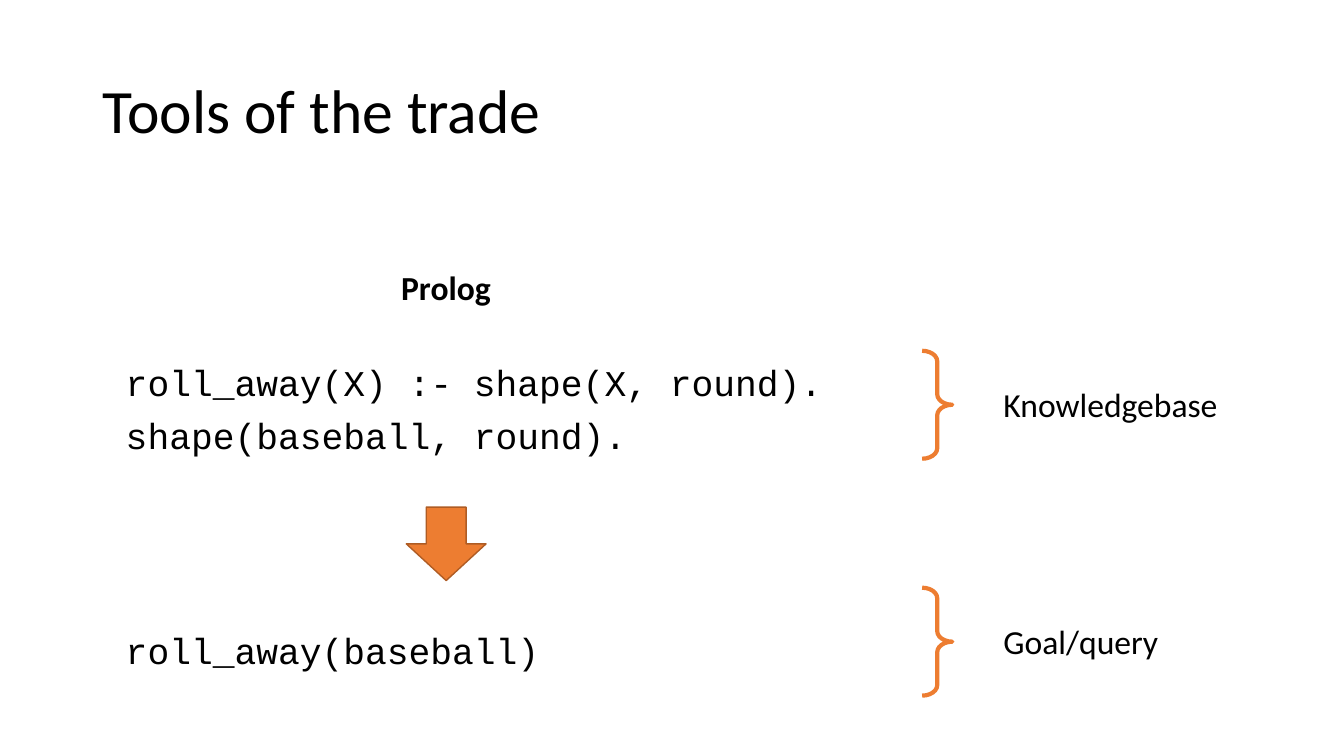
from dataclasses import dataclass

import pptx
import pptx.dml.color
import pptx.enum.shapes
import pptx.enum.text
import pptx.util
from pptx.util import Cm, Pt


@dataclass(frozen=True)
class Theme:
    text: str = "000000"
    accent: str = "ED7D31"
    accent_dark: str = "AF5C24"
    body_font: str = "Calibri"
    code_font: str = "Courier New"
    title_size: float = 44
    label_size: float = 24
    code_size: float = 25.9


theme = Theme()
RGB = pptx.dml.color.RGBColor.from_string
SHAPES = pptx.enum.shapes.MSO_SHAPE
ALIGN = pptx.enum.text.PP_ALIGN
ANCHOR = pptx.enum.text.MSO_ANCHOR


def write_text(shape, text, size, font=theme.body_font, bold=False,
               align=ALIGN.LEFT, anchor=ANCHOR.TOP, line_spacing=1.0):
    """Fill a shape with one paragraph per line, 10 pt apart."""
    frame = shape.text_frame
    frame.word_wrap = True
    frame.vertical_anchor = anchor
    frame.text = text
    for index, paragraph in enumerate(frame.paragraphs):
        paragraph.alignment = align
        paragraph.line_spacing = line_spacing
        paragraph.space_before = Pt(10 if index else 0)
        for run in paragraph.runs:
            run.font.name = font
            run.font.size = Pt(size)
            run.font.bold = bold
            run.font.color.rgb = RGB(theme.text)


presentation = pptx.Presentation()
presentation.slide_width = Cm(33.87)
presentation.slide_height = Cm(19.05)
slide = presentation.slides.add_slide(presentation.slide_layouts[5])
shapes = slide.shapes

title = shapes.title
title.left, title.top, title.width, title.height = Cm(2.34), Cm(1.02), Cm(29.21), Cm(3.68)
write_text(title, "Tools of the trade", theme.title_size,
           anchor=ANCHOR.MIDDLE, line_spacing=0.9)

heading = shapes.add_textbox(Cm(6.81), Cm(5.59), Cm(8.86), Cm(2.29))
write_text(heading, "Prolog", theme.label_size, bold=True,
           align=ALIGN.CENTER, anchor=ANCHOR.BOTTOM, line_spacing=0.9)

# Each part: code, its top and height, brace top, label
parts = [
    ("roll_away(X) :- shape(X, round).\nshape(baseball, round).",
     9.08, 2.6, 8.84, "Knowledgebase"),
    ("roll_away(baseball)", 15.84, 1.3, 14.81, "Goal/query"),
]
for code, code_top, code_height, brace_top, label in parts:
    code_box = shapes.add_textbox(Cm(2.92), Cm(code_top), Cm(19.28), Cm(code_height))
    write_text(code_box, code, theme.code_size, font=theme.code_font, line_spacing=0.9)

    brace = shapes.add_shape(SHAPES.RIGHT_BRACE, Cm(23.24), Cm(brace_top), Cm(0.76), Cm(2.72))
    brace.adjustments[0] = 0.35
    brace.shadow.inherit = False
    brace.fill.background()
    brace.line.color.rgb = RGB(theme.accent)
    brace.line.width = Pt(3)

    label_box = shapes.add_textbox(Cm(25.04), Cm(brace_top + 0.71), Cm(5.97), Cm(1.27))
    write_text(label_box, label, theme.label_size)

arrow = shapes.add_shape(SHAPES.DOWN_ARROW, Cm(10.24), Cm(12.78), Cm(2.01), Cm(1.85))
arrow.shadow.inherit = False
arrow.fill.solid()
arrow.fill.fore_color.rgb = RGB(theme.accent)
arrow.line.color.rgb = RGB(theme.accent_dark)
arrow.line.width = Pt(1)

presentation.save("out.pptx")
